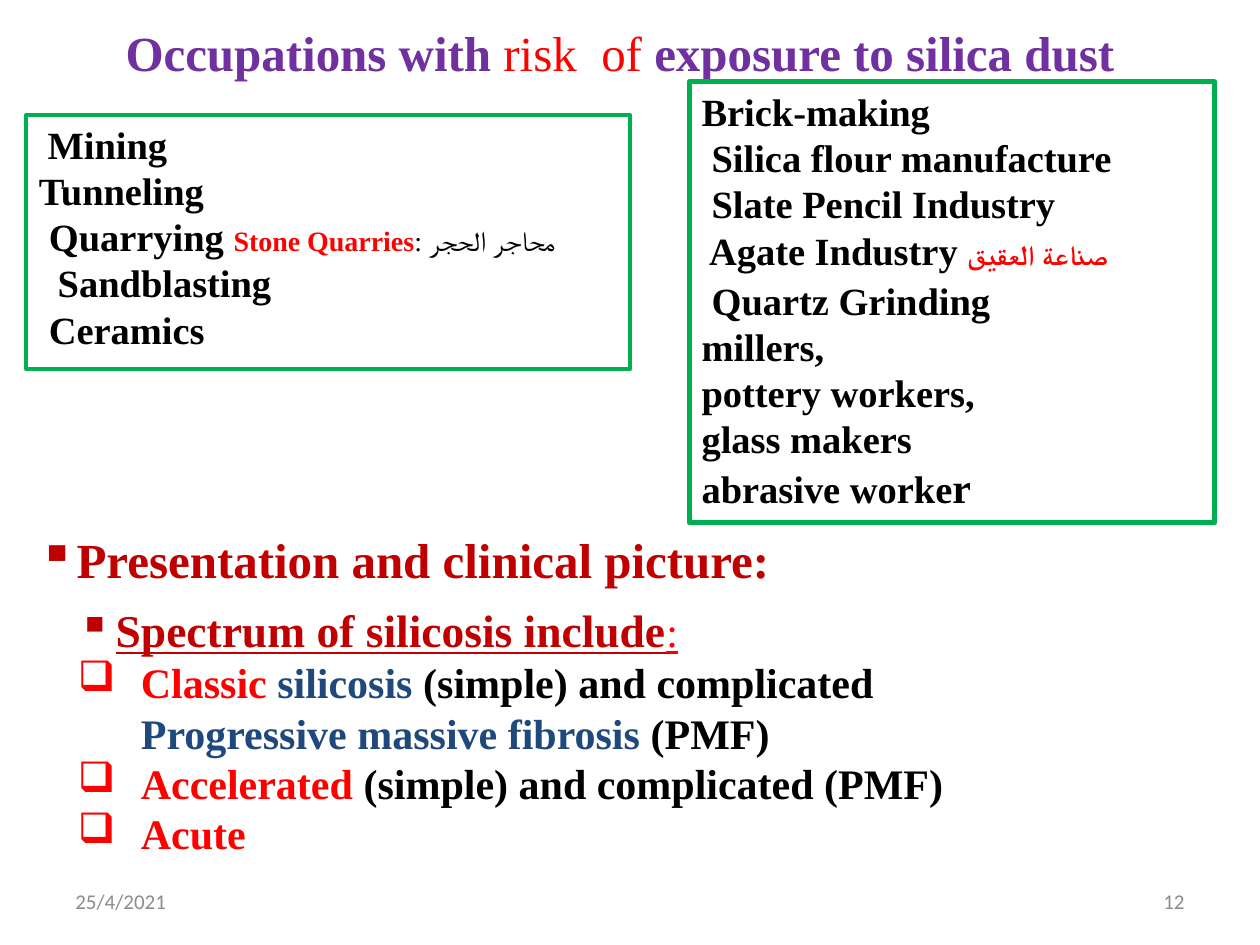
from dataclasses import dataclass
from typing import Optional

from lxml import etree
from pptx import Presentation
from pptx.dml.color import RGBColor
from pptx.enum import shapes, text
from pptx.oxml import ns
from pptx.util import Inches, Pt

SERIF = "Times New Roman"
BLACK, RED, DARK_RED = "000000", "FF0000", "C00000"
PURPLE, BLUE, GREEN, GRAY = "7030A0", "1F497D", "00B050", "8C8C8C"
LEFT, CENTER, RIGHT, JUSTIFY = (
    text.PP_ALIGN.LEFT, text.PP_ALIGN.CENTER, text.PP_ALIGN.RIGHT, text.PP_ALIGN.JUSTIFY)


@dataclass
class Run:
    words: str
    size: float = 22
    color: str = BLACK
    bold: bool = True
    underline: bool = False
    font: str = SERIF


@dataclass
class Line:
    runs: list[Run]
    align: text.PP_ALIGN = LEFT
    indent: float = 0
    bullet: Optional[str] = None
    space_before: float = 0


@dataclass
class Box:
    left: float
    top: float
    width: float
    height: float
    lines: list[Line]
    border: float = 0
    anchor: text.MSO_ANCHOR = text.MSO_ANCHOR.TOP


def rgb(color: str) -> RGBColor:
    return RGBColor.from_string(color)


def add_run(paragraph, words: str, *, size: float, color: str, bold: bool,
            underline: bool, font: str) -> None:
    run = paragraph.add_run()
    run.text = words
    run.font.size = Pt(size)
    run.font.name = font
    run.font.bold = bold
    run.font.underline = underline
    run.font.color.rgb = rgb(color)


def format_paragraph(paragraph, line: Line) -> None:
    paragraph.alignment = line.align
    if line.space_before:
        paragraph.space_before = Pt(line.space_before)
    properties = paragraph._p.get_or_add_pPr()
    if line.indent:
        properties.set("marL", str(Inches(line.indent)))
    if line.bullet:
        properties.set("indent", str(Inches(-line.indent)))
        bullet = etree.SubElement(properties, ns.qn("a:buChar"))
        bullet.set("char", line.bullet)


def draw_box(slide, box: Box) -> None:
    place = [Inches(value) for value in (box.left, box.top, box.width, box.height)]
    if box.border:
        shape = slide.shapes.add_shape(shapes.MSO_SHAPE.RECTANGLE, *place)
        shape.shadow.inherit = False
        shape.fill.background()
        shape.line.color.rgb = rgb(GREEN)
        shape.line.width = Pt(box.border)
    else:
        shape = slide.shapes.add_textbox(*place)
    frame = shape.text_frame
    frame.word_wrap = True
    frame.vertical_anchor = box.anchor
    for index, line in enumerate(box.lines):
        paragraph = frame.add_paragraph() if index else frame.paragraphs[0]
        format_paragraph(paragraph, line)
        for run in line.runs:
            add_run(paragraph, run.words, size=run.size, color=run.color,
                    bold=run.bold, underline=run.underline, font=run.font)


def job(words: str, *extra: Run, align=JUSTIFY, indent: float = 0,
        space_before: float = 0) -> Line:
    return Line([Run(words), *extra], align, indent, space_before=space_before)


def form(*parts: tuple[str, str]) -> Line:
    return Line([Run(words, 24, color) for words, color in parts], indent=0.5, bullet="❑")


def footer(left: float, words: str, align) -> Box:
    run = Run(words, 12, GRAY, bold=False, font="Calibri")
    return Box(left, 6.95, 2.33, 0.4, [Line([run], align)], anchor=text.MSO_ANCHOR.MIDDLE)


BOXES = [
    # Title
    Box(0.59, 0.13, 8.66, 0.57, [Line([
        Run("Occupations with ", 28, PURPLE),
        Run("risk  of ", 28, RED, bold=False),
        Run("exposure to silica dust", 28, PURPLE)], CENTER)]),
    # Occupations, left and right
    Box(0.21, 0.91, 4.79, 2.02, [
        job("Mining", indent=0.07),
        job("Tunneling"),
        job("Quarrying ", Run("Stone Quarries", 16, RED),
            Run(": محاجر الحجر", 16, bold=False), indent=0.08),
        job("Sandblasting", align=LEFT, indent=0.15),
        job("Ceramics", align=LEFT, indent=0.08)], border=2.25),
    Box(5.47, 0.65, 4.17, 3.5, [
        job("Brick-making"),
        job("Silica flour manufacture", indent=0.08),
        job("Slate Pencil Industry", indent=0.08),
        job("Agate Industry ", Run("صناعة العقيق", 16, RED), indent=0.06),
        job("Quartz Grinding", indent=0.08, space_before=2.3),
        job("millers,", align=LEFT),
        job("pottery workers,", align=LEFT),
        job("glass makers", align=LEFT),
        job("abrasive worke", Run("r", 24), align=LEFT)], border=2.75),
    # Clinical picture
    Box(0.21, 4.15, 9.75, 0.57, [Line(
        [Run("Presentation and clinical picture:", 28, DARK_RED)], indent=0.3, bullet="▪")]),
    Box(0.52, 4.73, 8.1, 2.15, [
        Line([Run("Spectrum of silicosis include", 26, DARK_RED, underline=True),
              Run(":", 24, RED, bold=False, underline=True)], indent=0.3, bullet="▪"),
        form(("Classic", RED), (" silicosis ", BLUE), ("(simple) and complicated ", BLACK),
             ("Progressive massive fibrosis ", BLUE), ("(PMF)", BLACK)),
        form(("Accelerated", RED), (" (simple) and complicated (PMF)", BLACK)),
        form(("Acute", RED))]),
    # Date and slide number
    footer(0.5, "25/4/2021", LEFT),
    footer(7.17, "12", RIGHT),
]


def main() -> None:
    presentation = Presentation()
    presentation.slide_width = Inches(10)
    presentation.slide_height = Inches(7.5)
    slide = presentation.slides.add_slide(presentation.slide_layouts[6])
    for box in BOXES:
        draw_box(slide, box)
    presentation.save("out.pptx")


if __name__ == "__main__":
    main()
